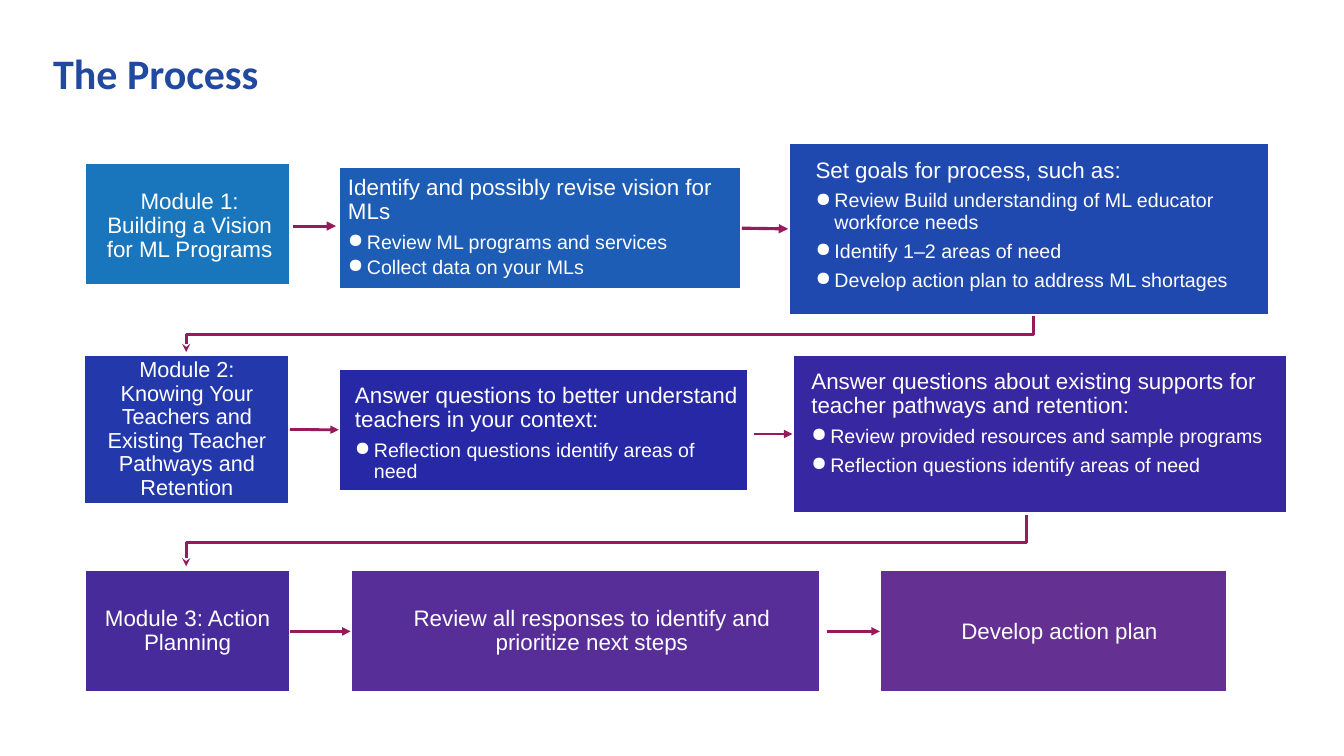
from lxml.etree import SubElement
from pptx import Presentation
from pptx.dml.color import RGBColor
from pptx.enum.shapes import MSO_CONNECTOR, MSO_SHAPE
from pptx.enum.text import MSO_ANCHOR, PP_ALIGN
from pptx.oxml.ns import qn
from pptx.util import Pt

COLORS = {
    "title": "20499F", "white": "FFFFFF", "arrow": "971A5C",
    "vision": "1975BC", "identify": "1D5DB5", "goals": "2049B0",
    "teachers": "2338AB", "context": "2628A6", "supports": "3728A1",
    "planning": "472B9B", "review": "572E97", "develop": "643092",
}
TOP, LEFT, BOTTOM, RIGHT = range(4)


def rgb(name):
    return RGBColor.from_string(COLORS[name])


class ProcessSlide:
    body_font = "Arial"
    title_font = "Calibri"
    inset = 8.6
    line_spacing = 0.9
    bullet_indent = 13.5

    def __init__(self, deck):
        self.shapes = deck.slides.add_slide(deck.slide_layouts[6]).shapes

    def format_runs(self, paragraph, font, size, color, bold=False):
        paragraph.line_spacing = self.line_spacing
        for run in paragraph.runs:
            run.font.name = font
            run.font.size = Pt(size)
            run.font.bold = bold
            run.font.color.rgb = rgb(color)

    def set_frame(self, frame, anchor, insets):
        frame.word_wrap = True
        frame.vertical_anchor = anchor
        frame.margin_left, frame.margin_top, frame.margin_right, frame.margin_bottom = map(Pt, insets)

    def title(self, text, left, top, width, height):
        heading = self.shapes.add_textbox(Pt(left), Pt(top), Pt(width), Pt(height)).text_frame
        heading.text = text
        self.set_frame(heading, MSO_ANCHOR.MIDDLE, (0, 0, 0, 0))
        self.format_runs(heading.paragraphs[0], self.title_font, 30, "title", True)

    def bullet(self, paragraph, space_before):
        properties = paragraph._p.get_or_add_pPr()
        properties.set("marL", str(Pt(self.bullet_indent)))
        properties.set("indent", str(-Pt(self.bullet_indent)))
        bullet_color = SubElement(properties, qn("a:buClr"))
        SubElement(bullet_color, qn("a:srgbClr"), val=COLORS["white"])
        SubElement(properties, qn("a:buChar"), char="●")
        paragraph.space_before = Pt(space_before)

    def step(self, color, bounds, heading, bullets=(), gaps=(), shift=(0, 0), size=16):
        box = self.shapes.add_shape(MSO_SHAPE.RECTANGLE, *map(Pt, bounds))
        box.shadow.inherit = False
        box.fill.solid()
        box.fill.fore_color.rgb = rgb(color)
        box.line.color.rgb = rgb("white")
        box.line.width = Pt(2)
        across, down = shift
        insets = [self.inset + move for move in (across, down, -across, -down)]
        anchor = MSO_ANCHOR.TOP if bullets else MSO_ANCHOR.MIDDLE
        self.set_frame(box.text_frame, anchor, insets)
        box.text_frame.text = "\n".join([heading, *bullets])
        first, *rest = box.text_frame.paragraphs
        for paragraph in (first, *rest):
            paragraph.alignment = PP_ALIGN.LEFT if bullets else PP_ALIGN.CENTER
        self.format_runs(first, self.body_font, size, "white")
        for paragraph, gap in zip(rest, gaps):
            self.bullet(paragraph, gap)
            self.format_runs(paragraph, self.body_font, 14, "white")
        return box

    def style_arrow(self, arrow, width, head):
        arrow.line.color.rgb = rgb("arrow")
        arrow.line.width = Pt(width)
        SubElement(arrow.line._get_or_add_ln(), qn("a:tailEnd"), type=head)

    def arrow(self, start, end, source=None, target=None, width=2):
        link = self.shapes.add_connector(MSO_CONNECTOR.STRAIGHT, *map(Pt, (*start, *end)))
        if source:
            link.begin_connect(source, RIGHT)
        if target:
            link.end_connect(target, LEFT)
        self.style_arrow(link, width, "triangle")
        SubElement(link._element.spPr, qn("a:effectLst"))

    def return_arrow(self, start_x, start_y, turn_y, end_x, end_y):
        builder = self.shapes.build_freeform(Pt(start_x), Pt(start_y))
        corners = [(start_x, turn_y), (end_x, turn_y), (end_x, end_y)]
        builder.add_line_segments([(Pt(x), Pt(y)) for x, y in corners], close=False)
        bend = builder.convert_to_shape()
        bend.shadow.inherit = False
        bend.fill.background()
        self.style_arrow(bend, 2, "stealth")


def main():
    deck = Presentation()
    deck.slide_width, deck.slide_height = Pt(960), Pt(540)
    process = ProcessSlide(deck)
    process.title("The Process", 38, 18, 886.5, 72)

    process.return_arrow(738, 224, 239, 133, 251.5)
    process.return_arrow(733, 367, 387.5, 133, 404.5)

    process.step("vision", (60.5, 116, 147, 88),
                 "Module 1: Building a Vision for ML Programs", shift=(1.5, 1.5))
    identify = process.step(
        "identify", (242, 119, 288, 88), "Identify and possibly revise vision for MLs",
        ["Review ML programs and services", "Collect data on your MLs"],
        gaps=(5.6, 2.4), shift=(-2, -1.5))
    goals = process.step(
        "goals", (563, 102, 344, 123), "Set goals for process, such as:",
        ["Review Build understanding of ML educator workforce needs",
         "Identify 1–2 areas of need",
         "Develop action plan to address ML shortages"],
        gaps=(5.6, 5.6, 5.6), shift=(11, 3))

    teachers = process.step(
        "teachers", (60, 253.5, 147, 106.5),
        "Module 2: Knowing Your Teachers and Existing Teacher Pathways and Retention", size=15.5)
    context = process.step(
        "context", (242, 263, 293, 88),
        "Answer questions to better understand teachers in your context:",
        ["Reflection questions identify areas of need"], gaps=(5.6,), shift=(3, 3))
    supports = process.step(
        "supports", (566, 253, 354, 114),
        "Answer questions about existing supports for teacher pathways and retention:",
        ["Review provided resources and sample programs",
         "Reflection questions identify areas of need"],
        gaps=(5.6, 5.6), shift=(5, 3))

    planning = process.step("planning", (60.5, 407, 147, 88), "Module 3: Action Planning")
    review = process.step(
        "review", (250.5, 407, 335.5, 88),
        "Review all responses to identify and prioritize next steps", shift=(4.5, 0))
    develop = process.step("develop", (628.5, 407, 248.5, 88), "Develop action plan", shift=(4, 0.5))

    process.arrow((209, 161.5), (240, 161.5), width=2.25)
    process.arrow((530, 163), (563, 163.5), identify, goals, width=2.25)
    process.arrow((207, 307), (242, 307), teachers, context)
    process.arrow((538.5, 310), (566, 310), target=supports)
    process.arrow((207.5, 451), (250.5, 451), planning, review)
    process.arrow((590.5, 451), (628.5, 451), target=develop)

    deck.save("out.pptx")


if __name__ == "__main__":
    main()
